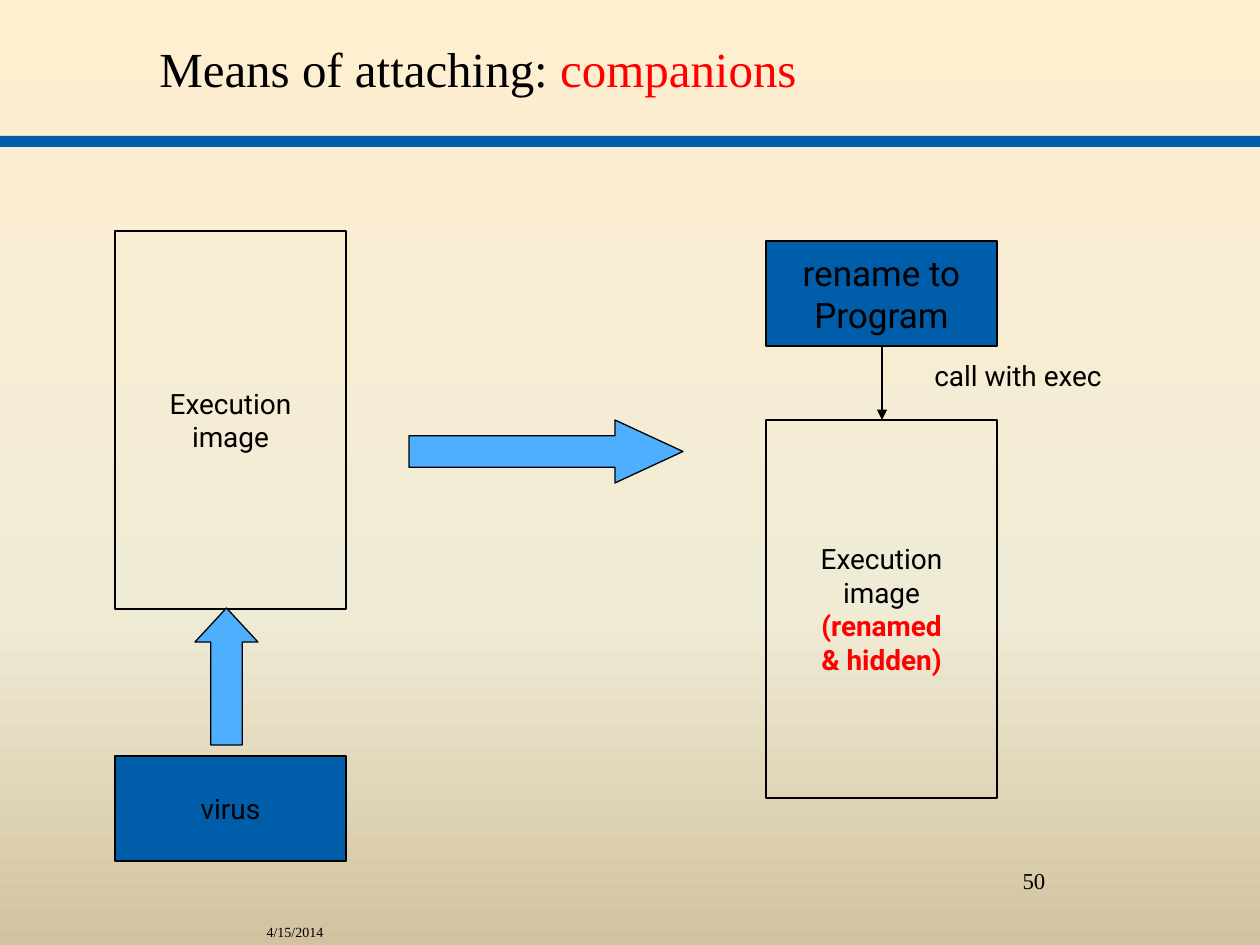
from copy import deepcopy

from lxml import etree
from pptx import Presentation
from pptx import util as u
from pptx.dml.color import RGBColor
from pptx.enum import shapes, text
from pptx.oxml.ns import qn

SCALE = 914400 / 126
COLORS = {
    "black": "000000", "red": "FF0000", "navy": "005DAA", "sky": "4FAFFF",
    "cream": "FFEFD1", "ivory": "F0EBD5", "sand": "D1C39F",
}
SERIF, SANS = "Times New Roman", "Roboto"
LEFT, CENTER, RIGHT = text.PP_ALIGN.LEFT, text.PP_ALIGN.CENTER, text.PP_ALIGN.RIGHT
TOP, MIDDLE = text.MSO_ANCHOR.TOP, text.MSO_ANCHOR.MIDDLE


def px(*lengths):
    return [u.Emu(round(length * SCALE)) for length in lengths]


def rgb(color):
    return RGBColor.from_string(COLORS[color])


def apply(target, formats):
    for name, value in formats.items():
        setattr(target, name, value)


def plain(*lines):
    return [[(words, "black", False)] for words in lines]


class Deck:
    def __init__(self, width, height):
        self.presentation = Presentation()
        slide_width, slide_height = px(width, height)
        apply(self.presentation, {"slide_width": slide_width, "slide_height": slide_height})
        self.slide = self.presentation.slides.add_slide(self.presentation.slide_layouts[6])

    def background(self, stops):
        fill = self.slide.background.fill
        fill.gradient()
        fill.gradient_angle = 270
        stop_list = self.slide.element.find(".//" + qn("a:gsLst"))
        while len(stop_list) < len(stops):
            stop_list.append(deepcopy(stop_list[0]))
        for stop, (position, color) in zip(fill.gradient_stops, stops):
            stop.color.rgb = rgb(color)
            stop.position = position

    def fill_text(self, frame, lines, size, font, align, anchor, wrap):
        apply(frame, {"word_wrap": wrap, "vertical_anchor": anchor})
        for index, line in enumerate(lines):
            paragraph = frame.add_paragraph() if index else frame.paragraphs[0]
            paragraph.alignment = align
            for words, color, bold in line:
                run = paragraph.add_run()
                run.text = words
                apply(run.font, {"size": u.Pt(size), "name": font, "bold": bold})
                run.font.color.rgb = rgb(color)

    def label(self, box, lines, size, font=SERIF, align=LEFT, anchor=TOP):
        frame = self.slide.shapes.add_textbox(*px(*box)).text_frame
        self.fill_text(frame, lines, size, font, align, anchor, True)

    def shape(self, kind, box, fill=None, outlined=True):
        shape = self.slide.shapes.add_shape(kind, *px(*box))
        shape.shadow.inherit = False
        if fill:
            shape.fill.solid()
            shape.fill.fore_color.rgb = rgb(fill)
        else:
            shape.fill.background()
        if outlined:
            self.outline(shape.line)
        else:
            shape.line.fill.background()
        return shape

    def outline(self, line):
        line.width = u.Pt(0.75)
        line.color.rgb = rgb("black")

    def block(self, box, lines, size=16, fill=None):
        block = self.shape(shapes.MSO_SHAPE.RECTANGLE, box, fill)
        self.fill_text(block.text_frame, lines, size, SANS, CENTER, MIDDLE, False)

    def block_arrow(self, box, head, rotation=0):
        arrow = self.shape(shapes.MSO_SHAPE.RIGHT_ARROW, box, "sky")
        arrow.adjustments[0], arrow.adjustments[1] = 0.5, head
        arrow.rotation = rotation

    def call_arrow(self, start, end):
        arrow = self.slide.shapes.add_connector(
            shapes.MSO_CONNECTOR.STRAIGHT, *px(*start, *end))
        self.outline(arrow.line)
        properties = arrow.element.spPr
        etree.SubElement(properties.find(qn("a:ln")), qn("a:tailEnd"), type="triangle")
        etree.SubElement(properties, qn("a:effectLst"))


def main():
    deck = Deck(1260, 945)
    deck.background([(0, "cream"), (0.65, "ivory"), (1, "sand")])
    deck.shape(shapes.MSO_SHAPE.RECTANGLE, (0, 136, 1260, 11), "navy", outlined=False)

    title = [[("Means of attaching: ", "black", False), ("companions", "red", False)]]
    deck.label((147, 10, 1018, 116), title, 28, anchor=MIDDLE)
    deck.label((84, 917, 252, 21), plain("4/15/2014"), 8, align=RIGHT)
    deck.label((903, 861, 262, 63), plain("50"), 13, align=CENTER)

    before, after = 115, 766
    width, image_height, virus_height = 231, 378, 105
    image = plain("Execution", "image")
    hidden = [[(words, "red", True)] for words in ("(renamed", "& hidden)")]

    deck.block((before, 756, width, virus_height), plain("virus"), fill="navy")
    deck.block((before, 231, width, image_height), image)
    deck.block((after, 241, width, virus_height), plain("rename to", "Program"), 20, "navy")
    deck.block((after, 420, width, image_height), image + hidden)

    deck.block_arrow((409, 420, 274, 63), 1.08)
    deck.block_arrow((158, 645, 137, 63), 0.54, rotation=270)
    deck.call_arrow((882, 346), (882, 420))
    deck.label((922, 352, 275, 63), plain("call with exec"), 16, SANS)

    deck.presentation.save("out.pptx")


if __name__ == "__main__":
    main()
